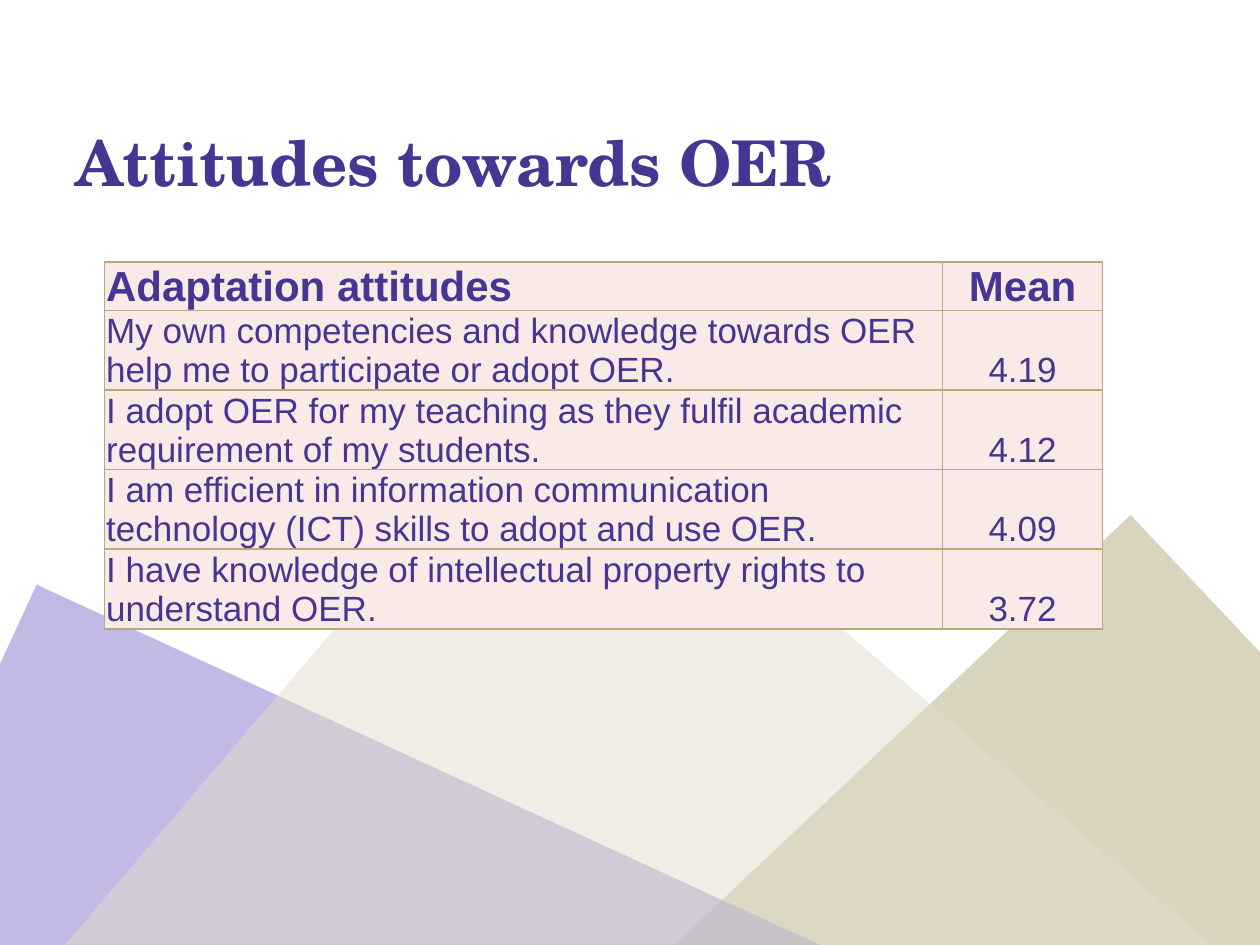
from dataclasses import dataclass

from lxml.etree import SubElement
from pptx import Presentation
from pptx.dml.color import RGBColor
from pptx.enum.shapes import MSO_SHAPE as Shape
from pptx.enum.text import MSO_ANCHOR as Anchor, MSO_AUTO_SIZE as AutoSize, PP_ALIGN as Align
from pptx.oxml.ns import qn
from pptx.util import Cm, Pt

PURPLE = RGBColor(0x46, 0x36, 0x91)
LILAC = RGBColor(0x86, 0x77, 0xCC)
KHAKI = RGBColor(0xB3, 0xAA, 0x7E)
SAND = RGBColor(0xE1, 0xDD, 0xCB)
BLUSH = RGBColor(0xF9, 0xEA, 0xE8)

HILL_WIDTH, HILL_HEIGHT = Cm(20.32), Cm(19.51)
COLUMN_WIDTHS = (Cm(16.89), Cm(3.23))
HEADER_HEIGHT, ROW_HEIGHT = Cm(0.94), Cm(1.59)


@dataclass
class Hill:
    left: float
    top: float
    angle: float
    color: RGBColor


@dataclass
class Attitude:
    statement: str
    mean: str


HILLS = (
    Hill(12.5, 14.71, 46.7, KHAKI),
    Hill(-4.27, 15.14, 24.7, LILAC),
    Hill(2.29, 11.89, 40.5, SAND),
)
HEADER = Attitude("Adaptation attitudes", "Mean")
ATTITUDES = (
    Attitude("My own competencies and knowledge towards OER help me to participate or adopt OER.", "4.19"),
    Attitude("I adopt OER for my teaching as they fulfil academic requirement of my students.", "4.12"),
    Attitude("I am efficient in information communication technology (ICT) skills to adopt and use OER.", "4.09"),
    Attitude("I have knowledge of intellectual property rights to understand OER.", "3.72"),
)


def write_text(frame, text: str, *, size: int, font: str = "Arial",
               bold: bool = False, align=Align.LEFT) -> None:
    para = frame.paragraphs[0]
    para.alignment = align
    span = para.add_run()
    span.text = text
    span.font.name = font
    span.font.size = Pt(size)
    span.font.bold = bold
    span.font.color.rgb = PURPLE


def draw_hill(page, hill: Hill) -> None:
    box = page.shapes.add_shape(Shape.RECTANGLE, Cm(hill.left), Cm(hill.top), HILL_WIDTH, HILL_HEIGHT)
    box.rotation = hill.angle
    box.shadow.inherit = False
    box.line.fill.background()
    box.fill.solid()
    box.fill.fore_color.rgb = hill.color
    color = box.fill._xPr.find(qn("a:solidFill")).find(qn("a:srgbClr"))
    SubElement(color, qn("a:alpha"), val="50000")


def add_borders(cell) -> None:
    properties = cell._tc.get_or_add_tcPr()
    for side in ("a:lnL", "a:lnR", "a:lnT", "a:lnB"):
        line = SubElement(properties, qn(side), w=str(Pt(1)))
        fill = SubElement(line, qn("a:solidFill"))
        SubElement(fill, qn("a:srgbClr"), val=str(KHAKI))


def fill_cell(cell, text: str, *, anchor=Anchor.BOTTOM, **text_format) -> None:
    add_borders(cell)
    cell.fill.solid()
    cell.fill.fore_color.rgb = BLUSH
    cell.margin_left = cell.margin_right = cell.margin_top = Cm(0.03)
    cell.margin_bottom = 0
    cell.vertical_anchor = anchor
    write_text(cell.text_frame, text, **text_format)


def draw_table(page) -> None:
    heights = [HEADER_HEIGHT] + [ROW_HEIGHT] * len(ATTITUDES)
    table = page.shapes.add_table(len(heights), len(COLUMN_WIDTHS), Cm(2.11), Cm(5.28),
                                  sum(COLUMN_WIDTHS), sum(heights)).table
    for column, width in zip(table.columns, COLUMN_WIDTHS):
        column.width = width
    for index, (height, entry) in enumerate(zip(heights, (HEADER, *ATTITUDES))):
        table.rows[index].height = height
        is_header = index == 0
        text_format = {"size": 24 if is_header else 20, "bold": is_header}
        fill_cell(table.cell(index, 0), entry.statement,
                  anchor=Anchor.BOTTOM if is_header else Anchor.MIDDLE, **text_format)
        fill_cell(table.cell(index, 1), entry.mean, align=Align.CENTER, **text_format)


def main() -> None:
    deck = Presentation()
    deck.slide_width, deck.slide_height = Cm(25.4), Cm(19.05)
    page = deck.slides.add_slide(deck.slide_layouts[5])

    # Background hills, with the title brought in front of them
    for hill in HILLS:
        draw_hill(page, hill)
    title = page.shapes.title
    page.shapes._spTree.append(title._element)

    # Title
    title.left, title.top, title.width, title.height = Cm(1.27), Cm(0.64), Cm(23.5), Cm(3.5)
    title.text_frame.vertical_anchor = Anchor.BOTTOM
    title.text_frame.auto_size = AutoSize.NONE
    write_text(title.text_frame, "Attitudes towards OER", size=36, font="TeX Gyre Schola", bold=True)

    # Mean scores
    draw_table(page)
    deck.save("out.pptx")


if __name__ == "__main__":
    main()
